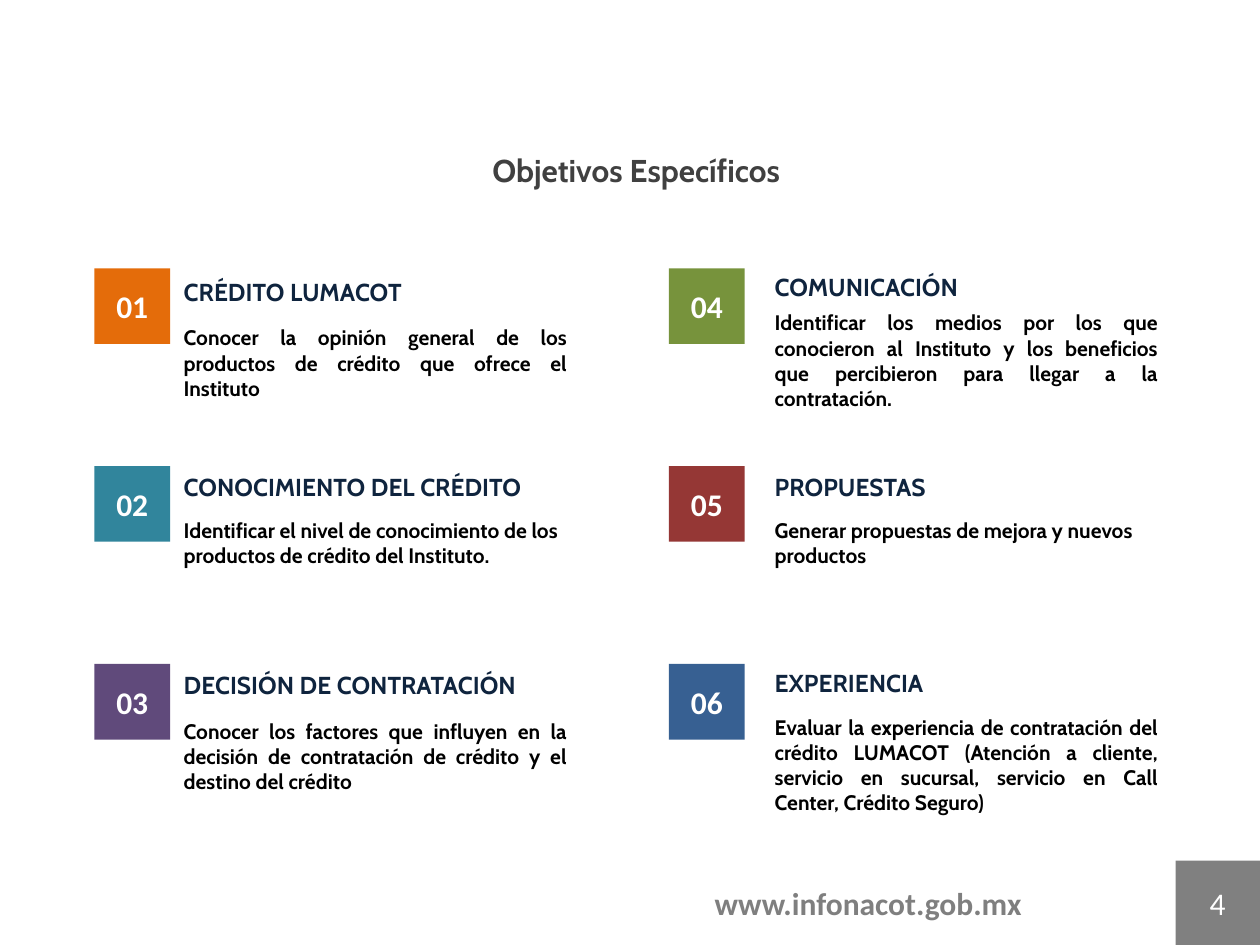
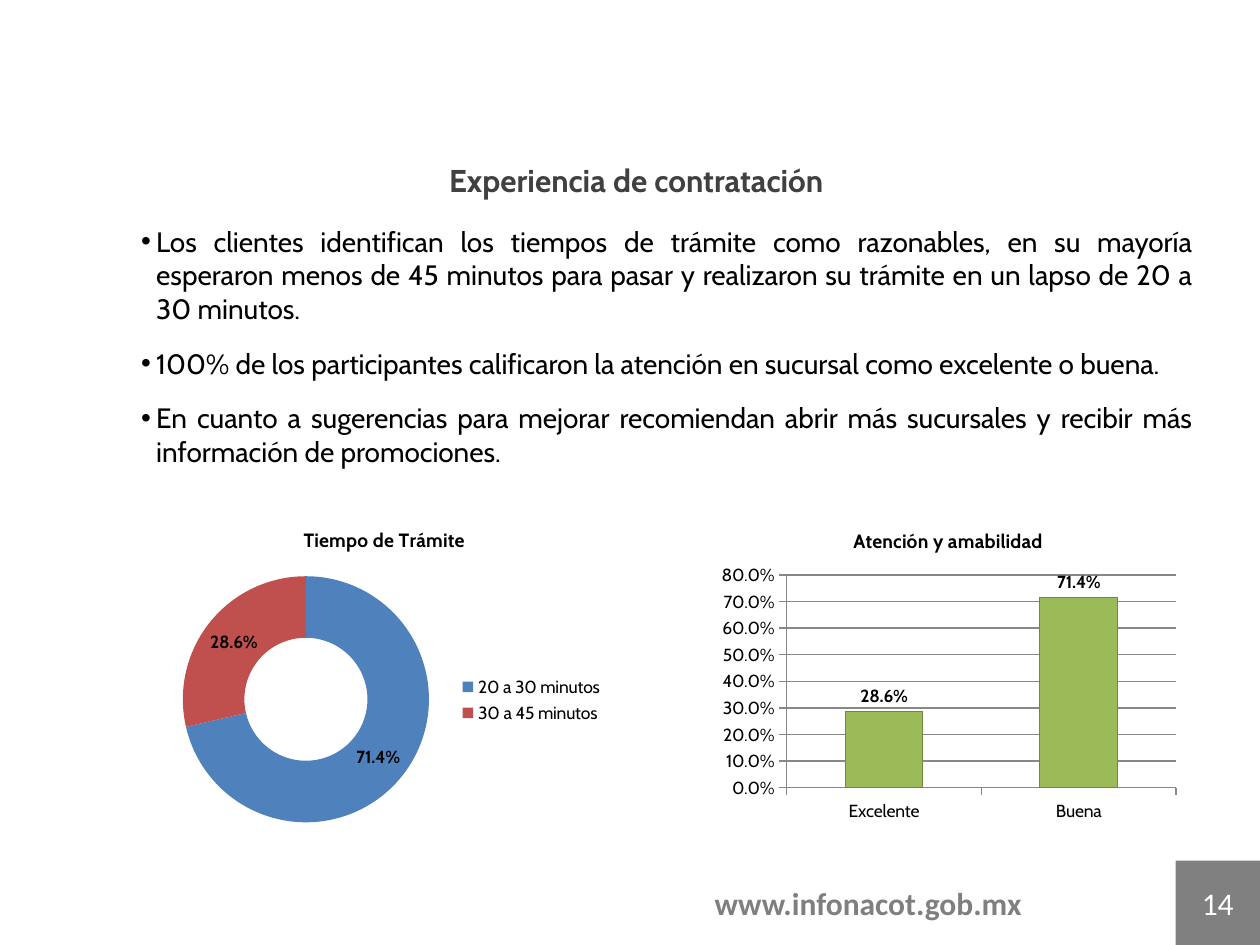
from lxml import etree
from pptx import Presentation
from pptx import util as u
from pptx.chart import data as cd
from pptx.dml.color import RGBColor
from pptx.enum import chart as ch, shapes, text
from pptx.oxml import ns

WIDE, HIGH = 10, 7.5
WHITE, BLACK, NAVY, DARK = "FFFFFF", "000000", "0F243E", "404040"
GRAY, MID, AXIS = "808080", "7F7F7F", "878787"
BLUE, RED, GREEN, OLIVE = "4F81BD", "C0504D", "9BBB59", "71893F"
LEFT, MID_AL, JUST = text.PP_ALIGN.LEFT, text.PP_ALIGN.CENTER, text.PP_ALIGN.JUSTIFY
TOP, CENTER = text.MSO_ANCHOR.TOP, text.MSO_ANCHOR.MIDDLE

# Column and row starts of the goals grid
COLS, ROWS, SIDE = (0.75, 5.31), (2.13, 3.70, 5.27), 0.6
GAPS = (0.61, 0.74)  # from the square's left to its text, per column

# Colour, heading, text, alignment, drop of heading and of text from the row
GOALS = [
    ("E46C0A", "CRÉDITO LUMACOT",
     "Conocer la opinión general de los productos de crédito que ofrece el Instituto",
     JUST, 0.02, 0.40),
    ("31859C", "CONOCIMIENTO DEL CRÉDITO",
     "Identificar el nivel de conocimiento de los productos de crédito del Instituto.",
     LEFT, 0, 0.36),
    ("604A7B", "DECISIÓN DE CONTRATACIÓN",
     "Conocer los factores que influyen en la decisión de contratación de crédito "
     "y el destino del crédito", JUST, 0, 0.38),
    ("77933C", "COMUNICACIÓN",
     "Identificar los medios por los que conocieron al Instituto y los beneficios "
     "que percibieron para llegar a la contratación.", JUST, -0.02, 0.28),
    ("953735", "PROPUESTAS", "Generar propuestas de mejora y nuevos productos",
     LEFT, 0, 0.36),
    ("376092", "EXPERIENCIA",
     "Evaluar la experiencia de contratación del crédito LUMACOT (Atención a cliente, "
     "servicio en sucursal, servicio en Call Center, Crédito Seguro)", JUST, -0.02, 0.35),
]

POINTS = [
    "Los clientes identifican los tiempos de trámite como razonables, en su mayoría "
    "esperaron menos de 45 minutos para pasar y realizaron su trámite en un lapso "
    "de 20 a 30 minutos.",
    "100% de los participantes calificaron la atención en sucursal como excelente o buena.",
    "En cuanto a sugerencias para mejorar recomiendan abrir más sucursales y recibir "
    "más información de promociones.",
]


def color(code):
    return RGBColor.from_string(code)


def inch(box):
    return [u.Inches(n) for n in box]


def style(font, size, hue=BLACK, bold=False, face="Cabin"):
    font.name, font.size, font.bold = face, u.Pt(size), bold
    font.color.rgb = color(hue)


def write(shape, lines, align=LEFT, anchor=TOP, bullet=False, space=0, **look):
    """Fill a shape with one paragraph per line; look goes to style()."""
    frame = shape.text_frame
    frame.word_wrap, frame.auto_size = True, text.MSO_AUTO_SIZE.NONE
    frame.vertical_anchor = anchor
    lines = [lines] if isinstance(lines, str) else lines
    for i, line in enumerate(lines):
        para = frame.paragraphs[0] if i == 0 else frame.add_paragraph()
        para.alignment = align
        para.space_before = u.Pt(space if i else 0)
        para.space_after = u.Pt(space)
        if bullet:
            props = para._p.get_or_add_pPr()
            props.set("marL", str(u.Inches(0.31)))
            props.set("indent", str(u.Inches(-0.12)))
            etree.SubElement(props, ns.qn("a:buChar"), char="•")
        run = para.add_run()
        run.text = line
        style(run.font, **look)


def label(slide, box, words, **look):
    write(slide.shapes.add_textbox(*inch(box)), words, **look)


def block(slide, box, fill, words, **look):
    shape = slide.shapes.add_shape(shapes.MSO_SHAPE.RECTANGLE, *inch(box))
    shape.shadow.inherit = False
    shape.fill.solid()
    shape.fill.fore_color.rgb = color(fill)
    shape.line.fill.background()
    write(shape, words, align=MID_AL, anchor=CENTER, size=18, hue=WHITE,
          face="Calibri", **look)


def place(shape, box):
    shape.left, shape.top, shape.width, shape.height = inch(box)


def start(deck, layout, title, top, page):
    """Add a slide with its title, footer address and page square."""
    slide = deck.slides.add_slide(deck.slide_layouts[layout])
    place(slide.shapes.title, (1.82, top, 6.46, 0.4))
    write(slide.shapes.title, title, align=MID_AL, size=18, hue=DARK, bold=True)
    label(slide, (4.45, 6.97, 4.88, 0.4), "www.infonacot.gob.mx", align=MID_AL,
          size=18, hue=MID, bold=True, face="Calibri")
    side = 0.67
    block(slide, (WIDE - side, HIGH - side, side, side), GRAY, page)
    return slide


def goal(slide, x, y, gap, num, item):
    fill, head, body, align, up, down = item
    block(slide, (x, y, SIDE, SIDE), fill, f"{num:02}", bold=True)
    label(slide, (x + gap, y + up, 3.69, 0.34), head, size=14, hue=NAVY, bold=True)
    label(slide, (x + gap, y + down, 3.24, 0.91), body, align=align, size=12, bold=True)


def layout(parent, at, x, y, w=None, h=None):
    """Fix a chart part, as shares of the chart, at child position at."""
    for old in parent.findall(ns.qn("c:layout")):
        parent.remove(old)
    node = etree.Element(ns.qn("c:layout"))
    parent.insert(at, node)
    man = etree.SubElement(node, ns.qn("c:manualLayout"))
    pairs = [("xMode", "edge"), ("yMode", "edge"), ("x", x), ("y", y)]
    if w:
        pairs = [("layoutTarget", "inner")] + pairs + [("w", w), ("h", h)]
    for tag, val in pairs:
        etree.SubElement(man, ns.qn(f"c:{tag}"), val=str(val))


def graph(slide, kind, box, title, cats, vals, area):
    """Add a one-series chart with bold percent labels."""
    data = cd.CategoryChartData(number_format="0.0%")
    data.categories = cats
    data.add_series(title, vals)
    chart = slide.shapes.add_chart(kind, *inch(box), data).chart
    style(chart.font, 10)
    chart.has_title, chart.has_legend = True, False
    run = chart.chart_title.text_frame.paragraphs[0].add_run()
    run.text = title
    style(run.font, 11, bold=True)
    plot = chart.plots[0]
    plot.has_data_labels = True
    tags = plot.data_labels
    tags.show_value, tags.show_percentage = True, False
    tags.number_format, tags.number_format_is_linked = "0.0%", False
    style(tags.font, 10, bold=True)
    layout(chart._chartSpace.chart.plotArea, 0, *area)
    return chart


def ring(slide, box):
    chart = graph(slide, ch.XL_CHART_TYPE.DOUGHNUT, box, "Tiempo de Trámite",
                  ["20 a 30 minutos", "30 a 45 minutos"], [0.714, 0.286],
                  (0.14, 0.2, 0.44, 0.75))
    plot = chart.plots[0]
    plot.vary_by_categories = True
    for i, hue in enumerate((BLUE, RED)):
        fill = plot.series[0].points[i].format.fill
        fill.solid()
        fill.fore_color.rgb = color(hue)
    chart.has_legend = True
    chart.legend.position = ch.XL_LEGEND_POSITION.RIGHT
    chart.legend.include_in_layout = False
    style(chart.legend.font, 10)
    layout(chart._chartSpace.chart.find(ns.qn("c:legend")), 1, 0.63, 0.49)


def bars(slide, box):
    chart = graph(slide, ch.XL_CHART_TYPE.COLUMN_CLUSTERED, box, "Atención y amabilidad",
                  ["Excelente", "Buena"], [0.286, 0.714], (0.16, 0.2, 0.82, 0.67))
    plot = chart.plots[0]
    plot.vary_by_categories, plot.gap_width = False, 150
    plot.data_labels.position = ch.XL_LABEL_POSITION.OUTSIDE_END
    look = plot.series[0].format
    look.fill.solid()
    look.fill.fore_color.rgb = color(GREEN)
    look.line.color.rgb = color(OLIVE)
    for axis in (chart.category_axis, chart.value_axis):
        axis.major_tick_mark = ch.XL_TICK_MARK.OUTSIDE
        axis.format.line.color.rgb = color(AXIS)
        style(axis.tick_labels.font, 10)
    axis = chart.value_axis
    axis.minimum_scale, axis.maximum_scale, axis.major_unit = 0, 0.8, 0.1
    axis.has_major_gridlines = True
    axis.major_gridlines.format.line.color.rgb = color(AXIS)
    axis.tick_labels.number_format = "0.0%"
    axis.tick_labels.number_format_is_linked = False


def goals(deck):
    slide = start(deck, 5, "Objetivos Específicos", 1.15, "4")
    for i, item in enumerate(GOALS):
        col, row = divmod(i, len(ROWS))
        goal(slide, COLS[col], ROWS[row], GAPS[col], i + 1, item)


def results(deck):
    slide = start(deck, 1, "Experiencia de contratación", 1.23, "14")
    body = slide.placeholders[1]
    place(body, (0.83, 1.73, 8.74, 2.32))
    write(body, POINTS, align=JUST, bullet=True, space=6, size=16)
    ring(slide, (0.83, 4.05, 4.44, 2.61))
    bars(slide, (5.64, 4.06, 3.77, 2.52))


def main():
    deck = Presentation()
    deck.slide_width, deck.slide_height = u.Inches(WIDE), u.Inches(HIGH)
    goals(deck)
    results(deck)
    deck.save("out.pptx")


if __name__ == "__main__":
    main()
